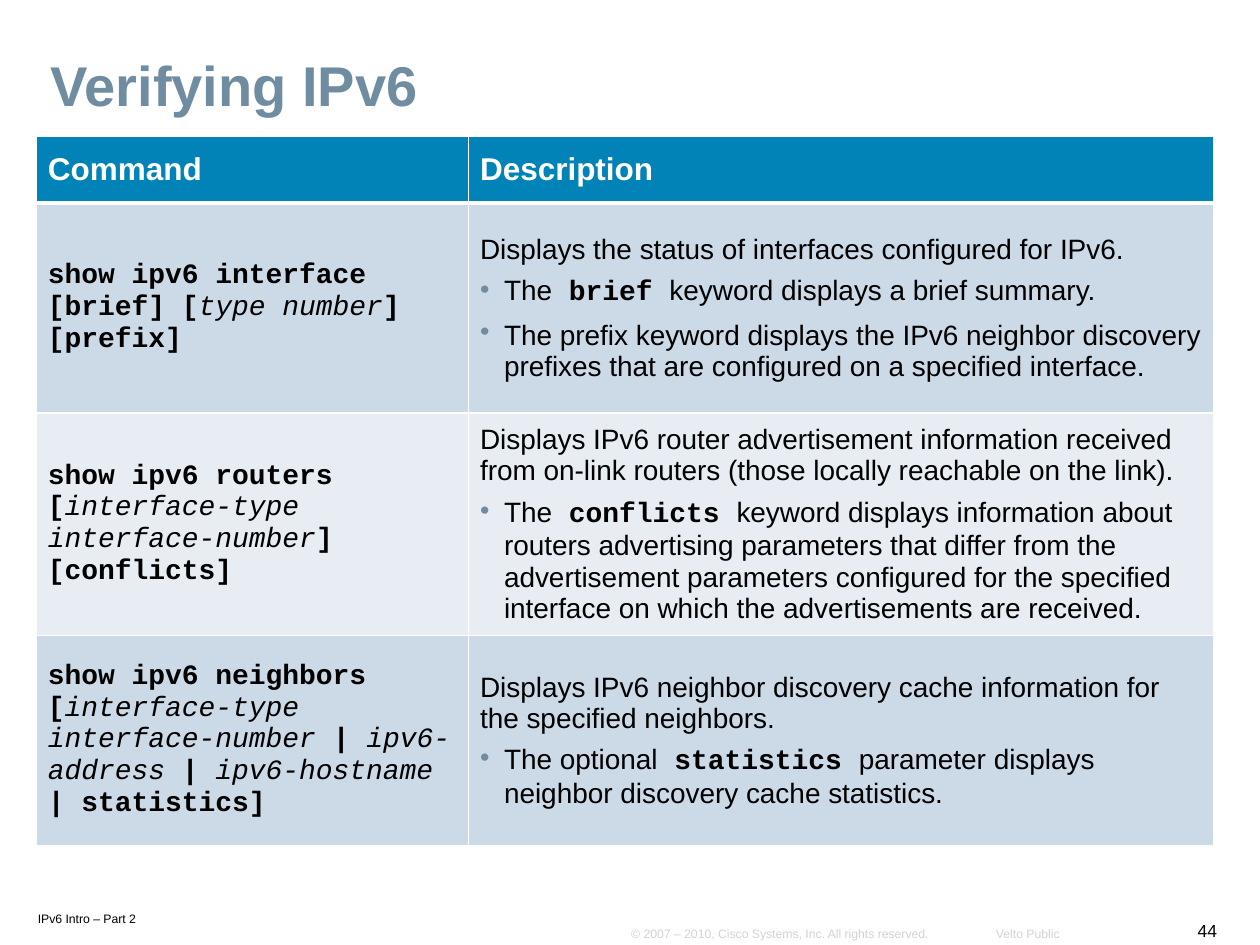
"""Build the Verifying IPv6 slide with its table of show commands."""
from lxml import etree
from pptx import Presentation
from pptx import util as u
from pptx.dml.color import RGBColor
from pptx.enum import text
from pptx.oxml.ns import qn

COLORS = {"title": "708CA1", "head": "0183B7", "odd": "CCD9E6", "even": "E7EDF3",
          "white": "FFFFFF", "black": "000000", "grey": "D3D3D3"}
STYLES = {
    "head": ("Arial", 18, "white", True, False),
    "plain": ("Arial", 16, "black", False, False),
    "code": ("Courier New", 16, "black", True, False),
    "arg": ("Courier New", 16, "black", False, True),
    "title": ("Arial", 32, "title", True, False),
    "footer": ("Arial", 7, "black", False, False),
    "credit": ("Arial", 7, "grey", False, False),
    "number": ("Arial", 10, "black", False, False),
}
TITLE = ("Verifying IPv6", "title", (0.31, 0.4, 9.32, 0.6), "left", True)
FOOTERS = [
    ("IPv6 Intro – Part 2", "footer", (0.21, 7.18, 1.05, 0.21), "left", True),
    ("44", "number", (9.4, 7.25, 0.35, 0.26), "right", False),
    ("© 2007 – 2010, Cisco Systems, Inc. All rights reserved.", "credit",
     (4.92, 7.3, 2.57, 0.21), "left", False),
    ("Velto Public", "credit", (7.79, 7.3, 0.71, 0.21), "right", False),
]
HEADERS = ["Command", "Description"]
COMMANDS = [
    ([("code", "show ipv6 interface [brief] ["), ("arg", "type number"), ("code", "] [prefix]")],
     "Displays the status of interfaces configured for IPv6.",
     [[("plain", "The"), ("code", " brief "), ("plain", "keyword displays a brief summary.")],
      [("plain", "The prefix keyword displays the IPv6 neighbor discovery prefixes that are "
                 "configured on a specified interface.")]]),
    ([("code", "show ipv6 routers ["), ("arg", "interface-type interface-number"),
      ("code", "] [conflicts]")],
     "Displays IPv6 router advertisement information received from on-link routers "
     "(those locally reachable on the link).",
     [[("plain", "The"), ("code", " conflicts "),
       ("plain", "keyword displays information about routers advertising parameters that differ "
                 "from the advertisement parameters configured for the specified interface on "
                 "which the advertisements are received.")]]),
    ([("code", "show ipv6 neighbors ["), ("arg", "interface-type interface-number "),
      ("code", "| "), ("arg", "ipv6-address "), ("code", "| "), ("arg", "ipv6-hostname "),
      ("code", "| statistics]")],
     "Displays IPv6 neighbor discovery cache information for the specified neighbors.",
     [[("plain", "The optional"), ("code", " statistics "),
       ("plain", "parameter displays neighbor discovery cache statistics.")]]),
]
COLUMNS = [3.43, 5.91]
ROWS = [0.53] + [1.67] * len(COMMANDS)
ALIGN = {"left": text.PP_ALIGN.LEFT, "right": text.PP_ALIGN.RIGHT}


def add_run(p, style, words):
    r = p.add_run()
    r.text = words
    font, size, color, bold, italic = STYLES[style]
    r.font.name, r.font.size = font, u.Pt(size)
    r.font.bold, r.font.italic = bold, italic
    r.font.color.rgb = RGBColor.from_string(COLORS[color])


def set_margins(target):
    target.margin_left = target.margin_right = u.Inches(0.09)
    target.margin_top = target.margin_bottom = u.Inches(0.04)


def add_label(s, words, style, box, align, wrap, anchor=text.MSO_ANCHOR.BOTTOM):
    tf = s.shapes.add_textbox(*map(u.Inches, box)).text_frame
    tf.word_wrap, tf.vertical_anchor = wrap, anchor
    set_margins(tf)
    p = tf.paragraphs[0]
    p.alignment = ALIGN[align]
    add_run(p, style, words)
    return p


def add_bullet(p):
    pPr = p._p.get_or_add_pPr()
    pPr.set("marL", str(u.Inches(0.19)))
    pPr.set("indent", str(-u.Inches(0.19)))
    color = etree.SubElement(pPr, qn("a:buClr"))
    etree.SubElement(color, qn("a:srgbClr"), val=COLORS["title"])
    etree.SubElement(pPr, qn("a:buChar"), char="•")


def set_borders(cell, widths):
    tcPr = cell._tc.get_or_add_tcPr()
    for side, width in widths.items():
        line = etree.SubElement(tcPr, qn(f"a:ln{side}"), w=str(u.Pt(width)))
        fill = etree.SubElement(line, qn("a:solidFill"))
        etree.SubElement(fill, qn("a:srgbClr"), val=COLORS["white"])


def fill_cell(cell, row, paragraphs):
    set_borders(cell, {"L": 1, "R": 1, "T": 3 if row == 1 else 1, "B": 3 if row == 0 else 1})
    cell.fill.solid()
    color = "head" if row == 0 else "odd" if row % 2 else "even"
    cell.fill.fore_color.rgb = RGBColor.from_string(COLORS[color])
    cell.vertical_anchor = text.MSO_ANCHOR.MIDDLE
    set_margins(cell)
    tf = cell.text_frame
    for i, runs in enumerate(paragraphs):
        p = tf.add_paragraph() if i else tf.paragraphs[0]
        if i:
            add_bullet(p)
        p.space_after = u.Pt(6)
        for style, words in runs:
            add_run(p, style, words)


def add_commands(s):
    frame = s.shapes.add_table(len(ROWS), len(COLUMNS), u.Inches(0.29), u.Inches(1.08),
                               u.Inches(sum(COLUMNS)), u.Inches(sum(ROWS)))
    table = frame.table
    for column, width in zip(table.columns, COLUMNS):
        column.width = u.Inches(width)
    for row, height in zip(table.rows, ROWS):
        row.height = u.Inches(height)
    content = [[[[("head", h)]] for h in HEADERS]]
    content += [[[command], [[("plain", intro)], *bullets]]
                for command, intro, bullets in COMMANDS]
    for i, cells in enumerate(content):
        for j, paragraphs in enumerate(cells):
            fill_cell(table.cell(i, j), i, paragraphs)


def main():
    prs = Presentation()
    prs.slide_width, prs.slide_height = u.Inches(10), u.Inches(7.5)
    s = prs.slides.add_slide(prs.slide_layouts[6])
    for footer in FOOTERS:
        add_label(s, *footer)
    add_label(s, *TITLE, anchor=text.MSO_ANCHOR.MIDDLE).line_spacing = 0.9
    add_commands(s)
    prs.save("out.pptx")


if __name__ == "__main__":
    main()
